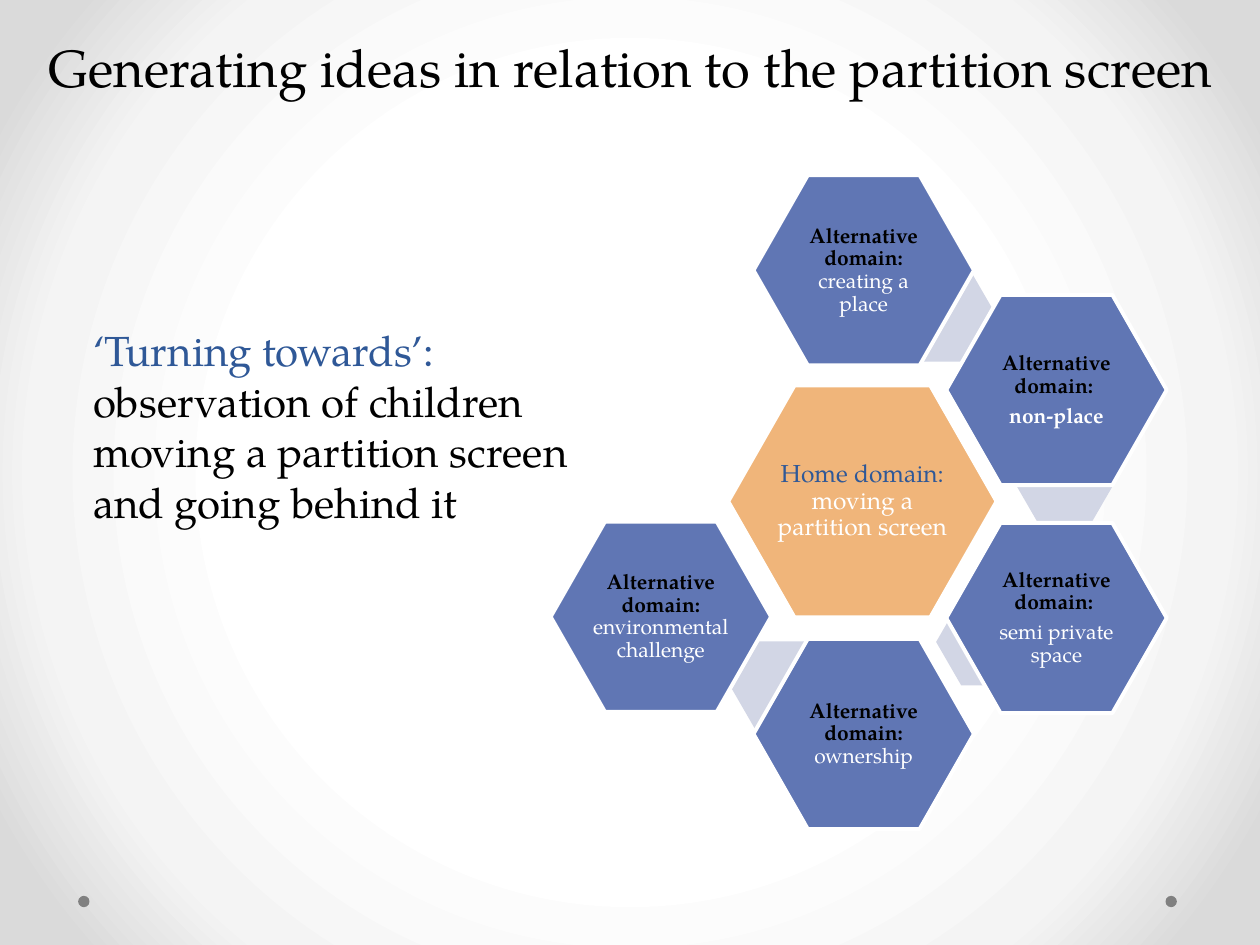
from dataclasses import dataclass
from typing import Optional

from lxml import etree
from pptx import Presentation
from pptx.dml.color import RGBColor
from pptx.enum.shapes import MSO_SHAPE as Preset
from pptx.enum.text import MSO_ANCHOR as Anchor, PP_ALIGN as Align
from pptx.oxml.ns import qn
from pptx.util import Inches, Pt

FONT = "TeX Gyre Pagella"
BLACK, WHITE, NAVY = "000000", "FFFFFF", "2F5897"
BLUE, PALE, ORANGE, GREY = "6076B4", "D2D6E5", "F0B57A", "808080"
HEX_SIZE = (1.75, 1.51)
BRIDGE_SIZE = (0.8, 0.69)
LABEL = "Alternative domain: "


@dataclass
class Words:
    text: str
    color: str
    bold: bool = False


@dataclass
class Domain:
    left: float
    top: float
    paragraphs: list[list[Words]]
    bridge: Optional[tuple[float, float]] = None


def rgb(value: str) -> RGBColor:
    return RGBColor.from_string(value)


def set_background(slide, stops: list[tuple[int, str]]) -> None:
    """Fill the slide with a circular gradient around its centre."""
    slide.background.fill.solid()
    solid = slide.element.find(".//" + qn("p:bgPr")).find(qn("a:solidFill"))
    gradient = etree.Element(qn("a:gradFill"), rotWithShape="1")
    stop_list = etree.SubElement(gradient, qn("a:gsLst"))
    for percent, color in stops:
        stop = etree.SubElement(stop_list, qn("a:gs"), pos=str(percent * 1000))
        etree.SubElement(stop, qn("a:srgbClr"), val=color)
    circle = etree.SubElement(gradient, qn("a:path"), path="circle")
    etree.SubElement(circle, qn("a:fillToRect"), l="50000", t="50000", r="50000", b="50000")
    solid.getparent().replace(solid, gradient)


def write(frame, paragraphs: list[list[Words]], size: float, align=Align.LEFT,
          spacing=None, after: float = 0) -> None:
    frame.word_wrap = True
    for index, words in enumerate(paragraphs):
        paragraph = frame.paragraphs[0] if index == 0 else frame.add_paragraph()
        paragraph.alignment = align
        paragraph.line_spacing = spacing
        paragraph.space_after = Pt(after)
        paragraph.font.name = FONT
        paragraph.font.size = Pt(size)
        for part in words:
            run = paragraph.add_run()
            run.text = part.text
            run.font.bold = part.bold
            run.font.color.rgb = rgb(part.color)


def add_plain(slide, preset, left: float, top: float, size: tuple[float, float], fill: str):
    shape = slide.shapes.add_shape(preset, Inches(left), Inches(top), *map(Inches, size))
    shape.shadow.inherit = False
    shape.fill.solid()
    shape.fill.fore_color.rgb = rgb(fill)
    shape.line.fill.background()
    return shape


def add_hexagon(slide, left: float, top: float, size: tuple[float, float], fill: str,
                paragraphs: list[list[Words]], points: float) -> None:
    hexagon = add_plain(slide, Preset.HEXAGON, left, top, size, fill)
    hexagon.adjustments[0] = 0.2857
    hexagon.line.color.rgb = rgb(WHITE)
    hexagon.line.width = Pt(2.25)
    frame = hexagon.text_frame
    frame.margin_left = frame.margin_right = Inches(0.02)
    frame.margin_top = frame.margin_bottom = Inches(0.02)
    frame.vertical_anchor = Anchor.MIDDLE
    write(frame, paragraphs, points, Align.CENTER, 0.9, points * 0.35)


def add_domain(slide, domain: Domain) -> None:
    if domain.bridge:
        bridge = add_plain(slide, Preset.HEXAGON, *domain.bridge, BRIDGE_SIZE, PALE)
        bridge.adjustments[0] = 0.289
    add_hexagon(slide, domain.left, domain.top, HEX_SIZE, BLUE, domain.paragraphs, 12)


def add_text(slide, left: float, top: float, width: float, height: float):
    box = slide.shapes.add_textbox(Inches(left), Inches(top), Inches(width), Inches(height))
    return box.text_frame


label = Words(LABEL, BLACK, True)
DOMAINS = [
    Domain(5.98, 1.39, [[label, Words("creating a place", WHITE)]], (7.12, 2.18)),
    Domain(7.51, 2.34, [[label], [Words("non-place", WHITE, True)]], (8.05, 3.48)),
    Domain(7.51, 4.15, [[label], [Words("semi private space", WHITE)]], (7.43, 4.75)),
    Domain(5.98, 5.07, [[label, Words("ownership", WHITE)]], (5.79, 5.09)),
    Domain(4.37, 4.14, [[label, Words("environmental challenge", WHITE)]]),
]


def main() -> None:
    deck = Presentation()
    deck.slide_width, deck.slide_height = Inches(10), Inches(7.5)
    slide = deck.slides.add_slide(deck.slide_layouts[6])

    # Background and corner dots
    set_background(slide, [(50, "FFFFFF"), (76, "F4F4F4"), (92, "DADADA")])
    for dot_left in (9.25, 0.62):
        add_plain(slide, Preset.OVAL, dot_left, 7.11, (0.09, 0.09), GREY)

    # Title
    title = add_text(slide, 0.2, 0.21, 9.61, 0.62)
    title.vertical_anchor = Anchor.BOTTOM
    heading = Words("Generating ideas in relation to the partition screen", BLACK)
    write(title, [[heading]], 30, Align.CENTER, Pt(58))

    # Home domain with the alternative domains around it
    home = [Words("Home domain: ", NAVY), Words("moving a partition screen", WHITE)]
    add_hexagon(slide, 5.78, 3.06, (2.13, 1.84), ORANGE, [home], 14)
    for domain in DOMAINS:
        add_domain(slide, domain)

    # Observation
    observation = add_text(slide, 0.64, 2.53, 4.17, 1.72)
    write(observation, [[
        Words("‘Turning towards’: ", NAVY),
        Words("observation of children moving a partition screen and going behind it", BLACK),
    ]], 24)

    deck.save("out.pptx")


if __name__ == "__main__":
    main()
